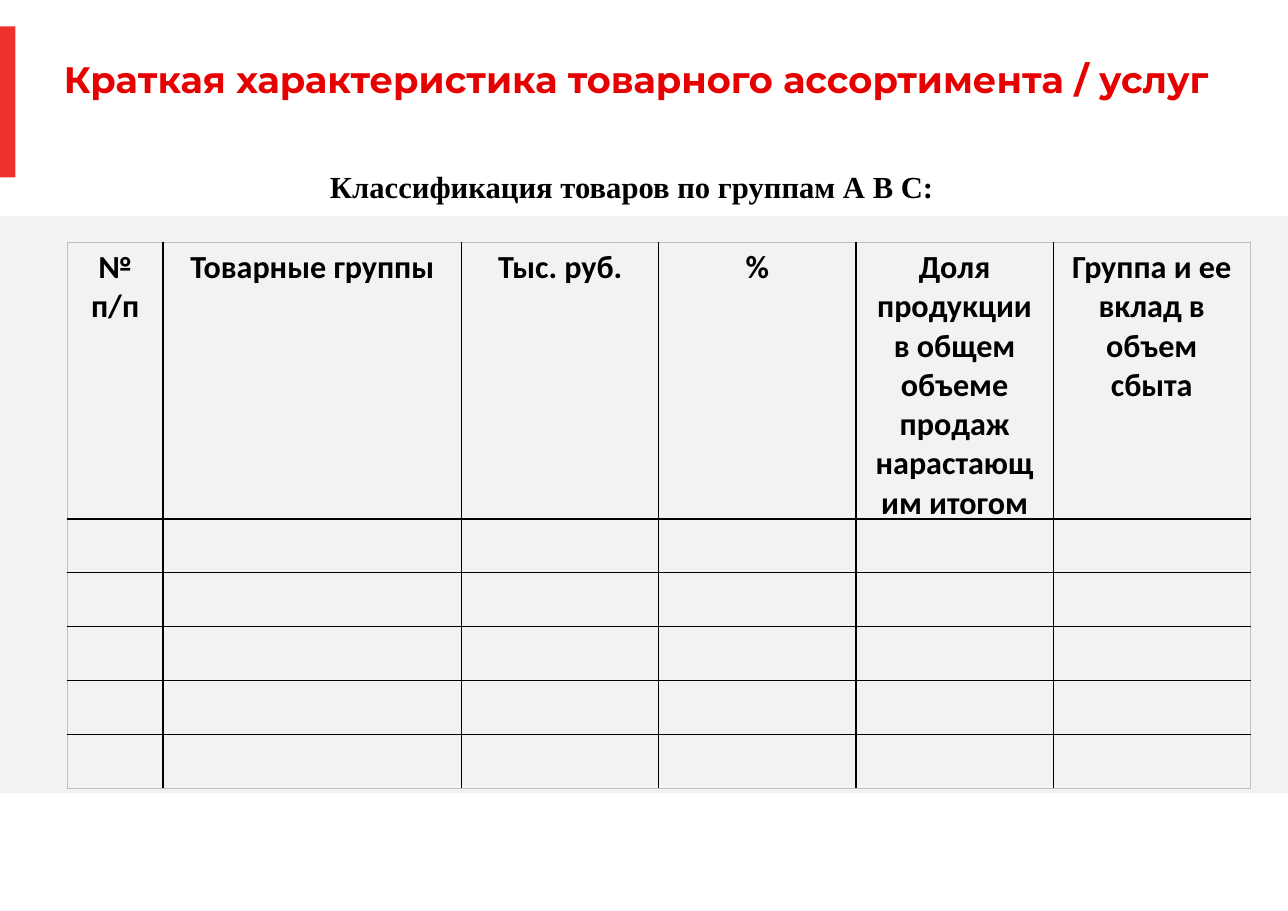
from pptx import Presentation
from pptx.dml.color import RGBColor
from pptx.enum.shapes import MSO_SHAPE
from pptx.enum.text import MSO_ANCHOR, PP_ALIGN
from pptx.oxml.ns import qn
from pptx.util import Inches, Pt
from lxml import etree

RECT = MSO_SHAPE.RECTANGLE
LEFT, CENTER = PP_ALIGN.LEFT, PP_ALIGN.CENTER
MIDDLE, BOTTOM = MSO_ANCHOR.MIDDLE, MSO_ANCHOR.BOTTOM
WHITE = RGBColor(0xFF, 0xFF, 0xFF)
BLACK = RGBColor(0, 0, 0)
PANEL_GREY = RGBColor(0xF2, 0xF2, 0xF2)
EDGE_GREY = RGBColor(0xBF, 0xBF, 0xBF)
BAR_RED = RGBColor(0xEE, 0x31, 0x2C)
TITLE_RED = RGBColor(0xE6, 0, 0)

# Content
TITLE = "Краткая характеристика товарного ассортимента / услуг"
SUBTITLE = "Классификация товаров по группам А В С:"
COLUMNS = [
    ("№ п/п", 0.87),
    ("Товарные группы", 2.71),
    ("Тыс. руб.", 1.79),
    ("%", 1.79),
    ("Доля продукции в общем объеме продаж нарастающим итогом", 1.79),
    ("Группа и ее вклад в объем сбыта", 1.79),
]
ROW_HEIGHTS = [2.24] + [0.49] * 5

# Formats
TITLE_FONT = {"name": "Montserrat", "size": Pt(24), "bold": True}
SUBTITLE_FONT = {"name": "Times New Roman", "size": Pt(20), "bold": True}
HEADER_FONT = {"name": "Calibri", "size": Pt(21), "bold": True}
TITLE_FRAME = {"margin_left": 0, "margin_right": 0, "margin_top": 0,
               "margin_bottom": Inches(0.37), "vertical_anchor": MIDDLE,
               "word_wrap": True}
SUBTITLE_FRAME = {"vertical_anchor": BOTTOM, "word_wrap": True}


def set_all(obj, values):
    for name, value in values.items():
        setattr(obj, name, value)


def write(tf, text, font, color, align):
    p = tf.paragraphs[0]
    p.alignment = align
    r = p.add_run()
    r.text = text
    set_all(r.font, font)
    r.font.color.rgb = color
    return p


def add_block(s, box, color):
    sp = s.shapes.add_shape(RECT, *map(Inches, box))
    sp.shadow.inherit = False
    sp.fill.solid()
    sp.fill.fore_color.rgb = color
    sp.line.fill.background()


def add_border(cell, side, color):
    tc_pr = cell._tc.get_or_add_tcPr()
    ln = etree.SubElement(tc_pr, qn("a:" + side), w=str(Pt(1)))
    fill = etree.SubElement(ln, qn("a:solidFill"))
    etree.SubElement(fill, qn("a:srgbClr"), val=str(color))


prs = Presentation()
prs.slide_width, prs.slide_height = Inches(11.69), Inches(8.27)
s = prs.slides.add_slide(prs.slide_layouts[5])
s.background.fill.solid()
s.background.fill.fore_color.rgb = WHITE

# Grey panel and red bar
add_block(s, (0, 1.96, 11.69, 5.24), PANEL_GREY)
add_block(s, (0, 0.24, 0.14, 1.37), BAR_RED)

# Title
title = s.shapes.title
set_all(title, {"left": Inches(0.58), "top": Inches(0.38),
                "width": Inches(10.59), "height": Inches(1.09)})
set_all(title.text_frame, TITLE_FRAME)
p = write(title.text_frame, TITLE, TITLE_FONT, TITLE_RED, LEFT)
p.line_spacing = 0.9

# Subtitle
tb = s.shapes.add_textbox(Inches(2.15), Inches(1.14), Inches(7.17), Inches(0.77))
set_all(tb.text_frame, SUBTITLE_FRAME)
write(tb.text_frame, SUBTITLE, SUBTITLE_FONT, BLACK, CENTER)

# Table: black inner lines, grey outer edge
n_rows, n_cols = len(ROW_HEIGHTS), len(COLUMNS)
table = s.shapes.add_table(n_rows, n_cols, Inches(0.61), Inches(2.2),
                           Inches(10.75), Inches(4.7)).table
set_all(table, {"first_row": False, "horz_banding": False})
for row, height in zip(table.rows, ROW_HEIGHTS):
    row.height = Inches(height)
for i, (heading, width) in enumerate(COLUMNS):
    table.columns[i].width = Inches(width)
    for j in range(n_rows):
        cell = table.cell(j, i)
        outer = {"lnL": i == 0, "lnR": i == n_cols - 1,
                 "lnT": j == 0, "lnB": j == n_rows - 1}
        for side, is_outer in outer.items():
            add_border(cell, side, EDGE_GREY if is_outer else BLACK)
        cell.fill.background()
    header = table.cell(0, i)
    header.margin_bottom = Inches(0.01)
    write(header.text_frame, heading, HEADER_FONT, BLACK, CENTER)

prs.save("out.pptx")
